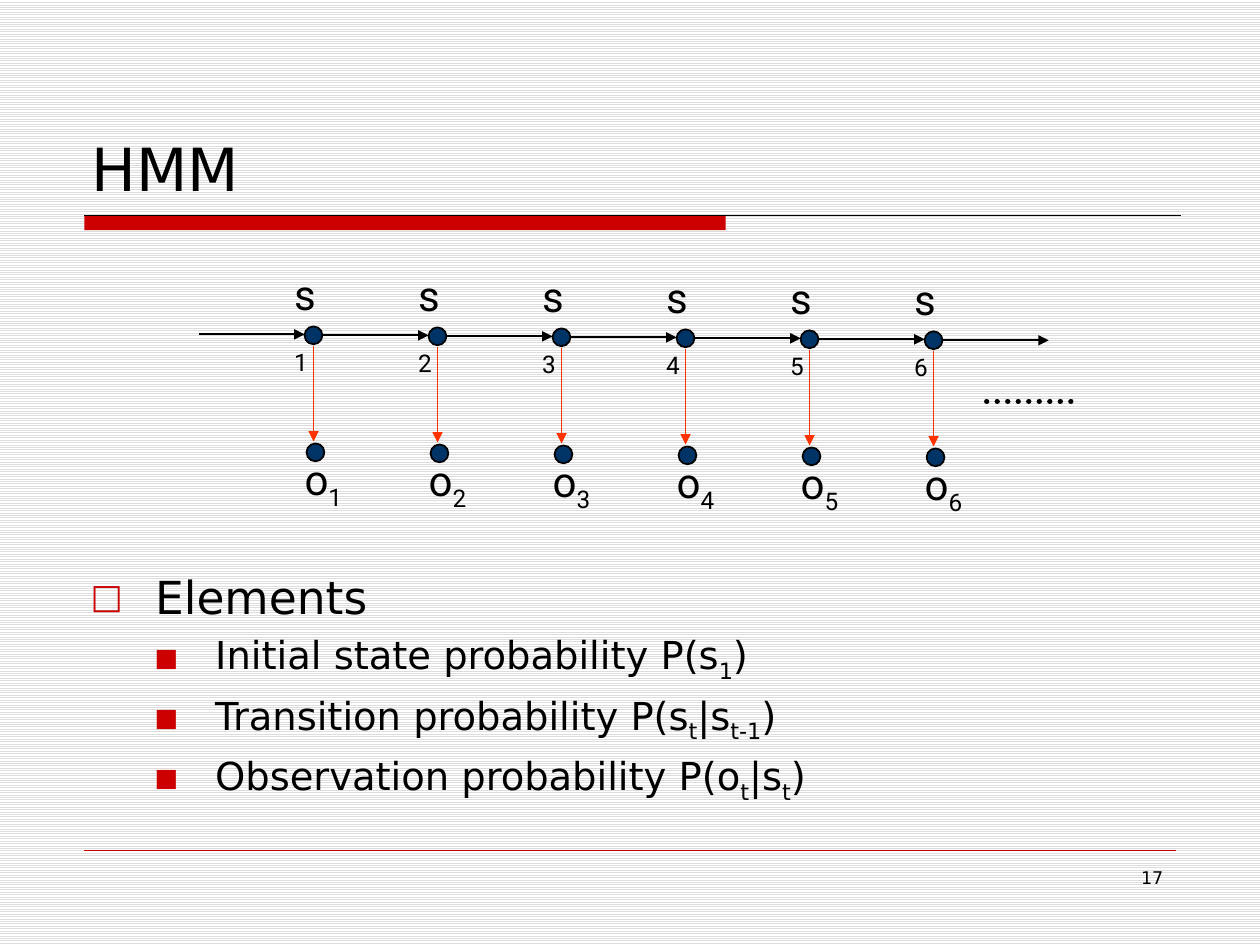
from dataclasses import dataclass

from lxml import etree
from pptx import Presentation
from pptx.dml.color import RGBColor
from pptx.enum.dml import MSO_LINE, MSO_PATTERN
from pptx.enum.shapes import MSO_CONNECTOR, MSO_SHAPE
from pptx.enum.text import MSO_ANCHOR, PP_ALIGN
from pptx.oxml.ns import qn
from pptx.util import Cm, Pt

STRAIGHT = MSO_CONNECTOR.STRAIGHT
RECTANGLE, OVAL = MSO_SHAPE.RECTANGLE, MSO_SHAPE.OVAL
LIGHT_HORIZONTAL = MSO_PATTERN.LIGHT_HORIZONTAL
DOTTED = MSO_LINE.ROUND_DOT
LEFT, RIGHT = PP_ALIGN.LEFT, PP_ALIGN.RIGHT
BOTTOM = MSO_ANCHOR.BOTTOM
TITLE_ONLY = 5


@dataclass(frozen=True)
class Theme:
    ink: str = "000000"
    accent: str = "CC0000"
    node: str = "003366"
    emission: str = "FF3300"
    stripe: str = "DDDDDD"
    paper: str = "FFFFFF"
    body_font: str = "DejaVu Sans"
    label_font: str = "Roboto"
    title_size: int = 34
    heading_size: int = 26
    item_size: int = 22
    label_size: int = 24
    number_size: int = 10


@dataclass(frozen=True)
class Box:
    """A region of the slide, in centimetres."""
    left: float
    top: float
    width: float
    height: float

    def emu(self):
        return [Cm(v) for v in (self.left, self.top, self.width, self.height)]


THEME = Theme()
STEPS = 6
HEADING = "Elements"
# Text between tildes is set as a subscript.
ITEMS = [
    "Initial state probability P(s~1~)",
    "Transition probability P(s~t~|s~t-1~)",
    "Observation probability P(o~t~|s~t~)",
]


def colour(value):
    return RGBColor.from_string(value)


def write(paragraph, marked_text, size, font=THEME.body_font):
    """Fill a paragraph, lowering the parts between tildes."""
    looks = {"size": Pt(size), "name": font}
    for index, part in enumerate(marked_text.split("~")):
        if not part:
            continue
        run = paragraph.add_run()
        run.text = part
        for key, value in looks.items():
            setattr(run.font, key, value)
        run.font.color.rgb = colour(THEME.ink)
        if index % 2:
            run.font._element.set("baseline", "-25000")


def add_text(slide, box, wrap=True):
    frame = slide.shapes.add_textbox(*box.emu()).text_frame
    frame.word_wrap = wrap
    return frame


def add_line(slide, start, end, line_colour, width=1, arrow=False):
    points = [Cm(v) for v in (*start, *end)]
    connector = slide.shapes.add_connector(STRAIGHT, *points)
    connector.line.color.rgb = colour(line_colour)
    connector.line.width = Pt(width)
    if arrow:
        etree.SubElement(connector.line._get_or_add_ln(), qn("a:tailEnd"), type="triangle")
    etree.SubElement(connector._element.spPr, qn("a:effectLst"))
    return connector


def add_filled(slide, kind, box, fill):
    shape = slide.shapes.add_shape(kind, *box.emu())
    shape.shadow.inherit = False
    shape.fill.solid()
    shape.fill.fore_color.rgb = colour(fill)
    return shape


def add_node(slide, x, y, diameter=0.36):
    radius = diameter / 2
    node = add_filled(slide, OVAL, Box(x - radius, y - radius, diameter, diameter), THEME.node)
    node.line.color.rgb = colour(THEME.ink)
    node.line.width = Pt(1)


def paint_background(slide):
    fill = slide.background.fill
    fill.patterned()
    fill.pattern = LIGHT_HORIZONTAL
    fill.fore_color.rgb = colour(THEME.stripe)
    fill.back_color.rgb = colour(THEME.paper)


def add_heading(slide, box, text):
    """Place the title with the red bar and the thin rule below it."""
    title = slide.shapes.title
    for key, value in zip(("left", "top", "width", "height"), box.emu()):
        setattr(title, key, value)
    title.text_frame.vertical_anchor = BOTTOM
    paragraph = title.text_frame.paragraphs[0]
    paragraph.alignment = LEFT
    write(paragraph, text, THEME.title_size)

    rule_left, rule_top = box.left + 0.1, box.top + box.height + 0.12
    bar = add_filled(slide, RECTANGLE, Box(rule_left, rule_top, 12.93, 0.3), THEME.accent)
    bar.line.fill.background()
    add_line(slide, (rule_left, rule_top), (rule_left + 22.1, rule_top), THEME.ink, 0.75)


def add_chain(slide, box):
    """Draw the states, their observations and the arrows between them."""
    pitch, drift = 2.5, 0.02
    first_x, first_y = box.left + 2.31, box.top + 1.47
    for step in range(STEPS + 1):
        x, y = first_x + step * pitch, first_y + step * drift
        add_line(slide, (x - 2.31, y - 0.02), (x - 0.18, y - 0.02), THEME.ink, arrow=True)
        if step == STEPS:
            break
        add_node(slide, x, y)
        add_line(slide, (x, y + 0.22), (x, y + 2.14), THEME.emission, arrow=True)
        add_node(slide, x + 0.04, y + 2.36)
        # The state label is narrow, so its index wraps below the letter.
        labels = [
            ("s", Box(x - 0.64, y - 1.47, 1.1, 1.27), True),
            ("o", Box(x - 0.43, y + 2.26, 1.27, 1.27), False),
        ]
        for letter, label_box, wrap in labels:
            frame = add_text(slide, label_box, wrap)
            write(frame.paragraphs[0], f"{letter}~{step + 1}~", THEME.label_size, THEME.label_font)

    right, dots_y = box.left + box.width, box.top + 2.8
    dots = add_line(slide, (right - 1.9, dots_y), (right, dots_y), THEME.ink, 3)
    dots.line.dash_style = DOTTED
    dots.line._get_or_add_ln().set("cap", "rnd")


def set_bullet(paragraph, symbol, percent, indent, hanging):
    properties = paragraph._p.get_or_add_pPr()
    properties.set("marL", str(Cm(indent)))
    properties.set("indent", str(-Cm(hanging)))
    bullet_colour = etree.SubElement(properties, qn("a:buClr"))
    etree.SubElement(bullet_colour, qn("a:srgbClr"), val=THEME.accent)
    etree.SubElement(properties, qn("a:buSzPct"), val=str(percent * 1000))
    etree.SubElement(properties, qn("a:buFont"), typeface=THEME.body_font)
    etree.SubElement(properties, qn("a:buChar"), char=symbol)


def add_elements(slide, box):
    frame = add_text(slide, box)
    heading = frame.paragraphs[0]
    write(heading, HEADING, THEME.heading_size)
    set_bullet(heading, "□", 75, 1.3, 1.3)
    for text in ITEMS:
        item = frame.add_paragraph()
        item.level = 1
        item.space_before = Pt(0.2 * THEME.item_size)
        write(item, text, THEME.item_size)
        set_bullet(item, "■", 65, 2.51, 1.22)


def add_footer(slide, box, number):
    add_line(slide, (box.left, box.top), (box.left + box.width, box.top), THEME.accent, 0.25)
    number_box = Box(box.left + box.width - 5.5, box.top + 0.2, 5.5, box.height - 0.2)
    paragraph = add_text(slide, number_box).paragraphs[0]
    paragraph.alignment = RIGHT
    write(paragraph, number, THEME.number_size)


def main():
    deck = Presentation()
    deck.slide_width, deck.slide_height = Cm(25.4), Cm(19.05)
    slide = deck.slides.add_slide(deck.slide_layouts[TITLE_ONLY])
    paint_background(slide)
    add_heading(slide, Box(1.6, 0.84, 22.22, 3.38), "HMM")
    add_chain(slide, Box(4.01, 5.29, 17.78, 5.05))
    add_elements(slide, Box(1.58, 11.35, 22.22, 5.4))
    add_footer(slide, Box(1.7, 17.15, 22, 1.52), "17")
    deck.save("out.pptx")


if __name__ == "__main__":
    main()
